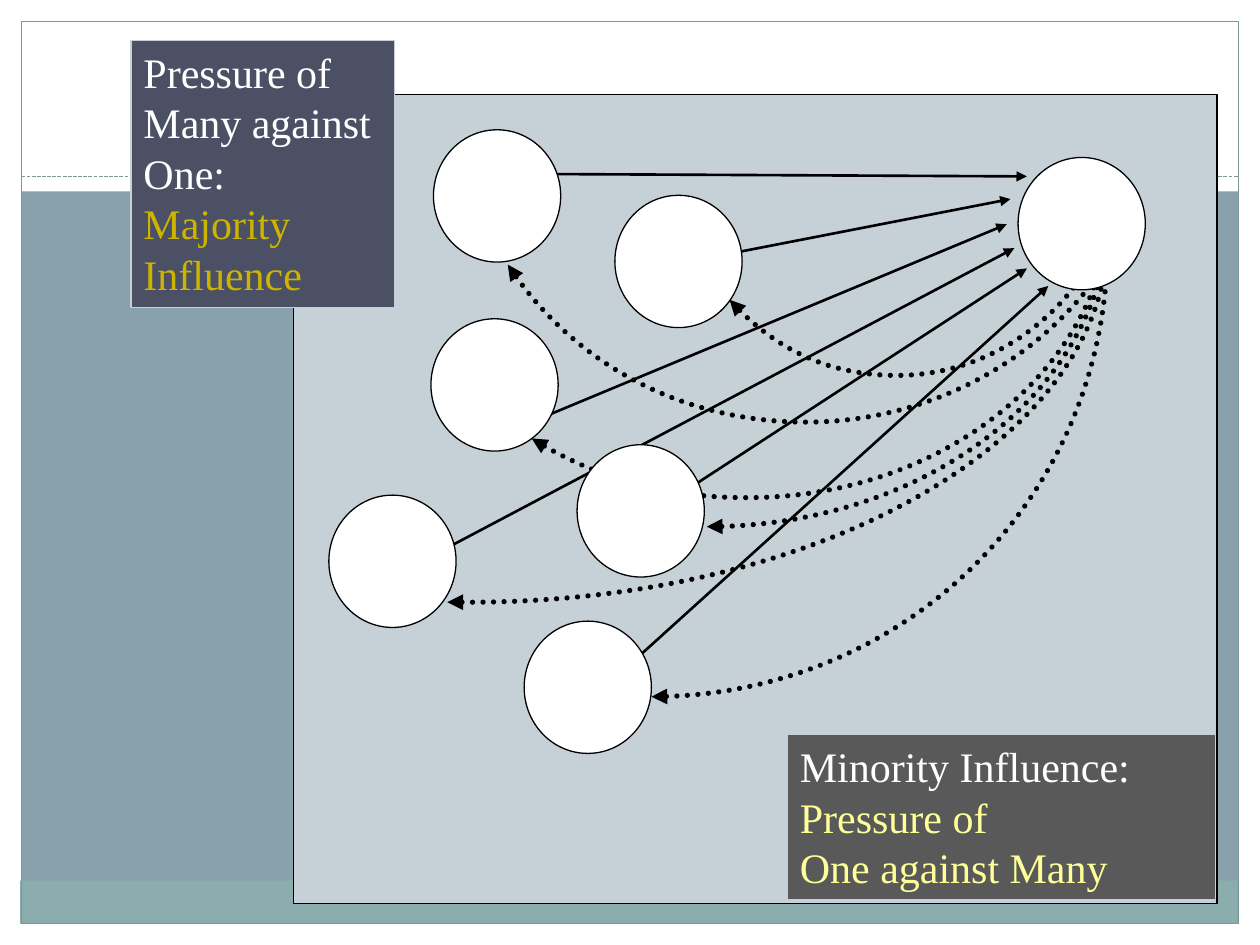
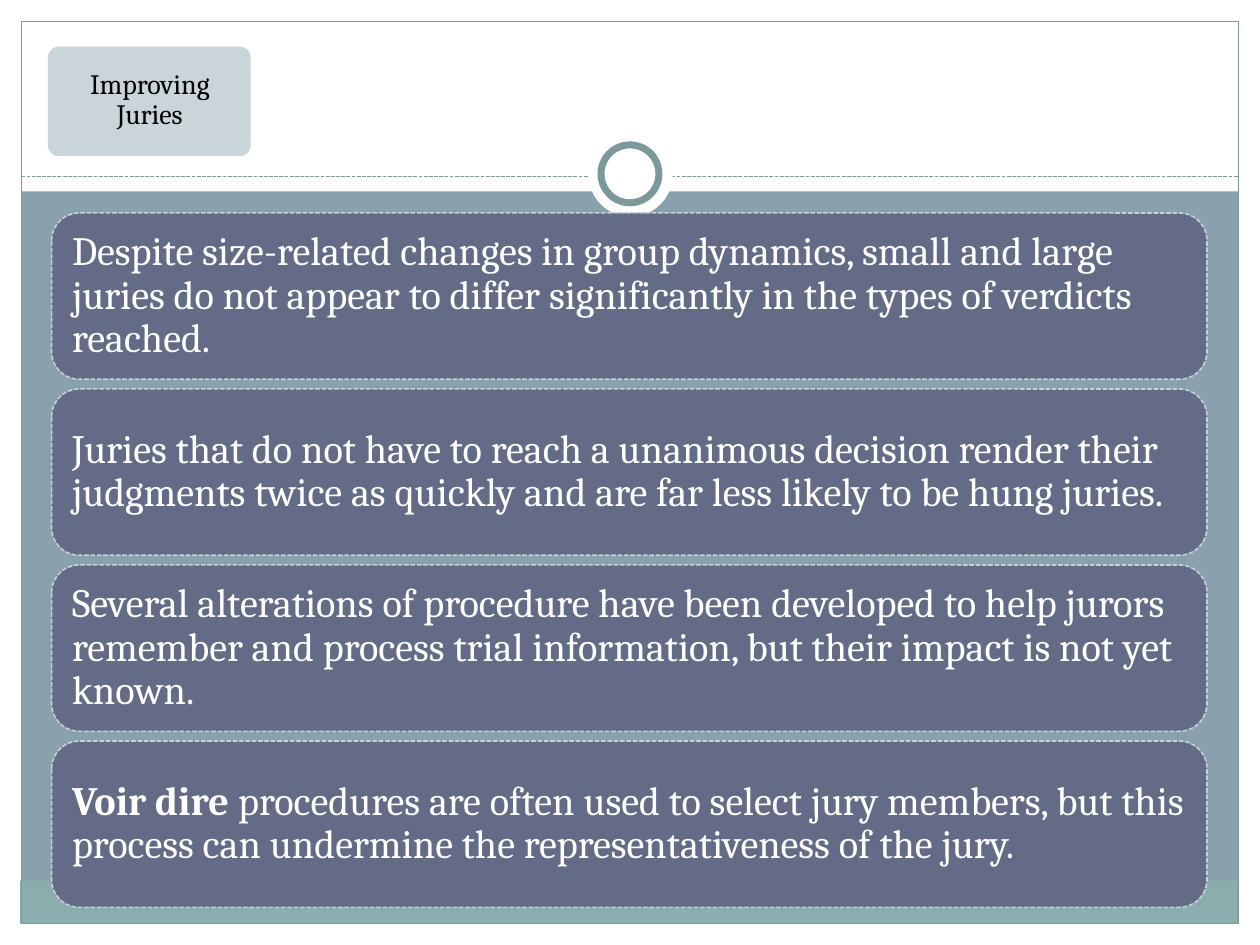
from lxml import etree
from pptx import Presentation
from pptx.dml.color import RGBColor
from pptx.enum.dml import MSO_LINE
from pptx.enum.shapes import MSO_CONNECTOR, MSO_SHAPE
from pptx.enum.text import MSO_ANCHOR, PP_ALIGN
from pptx.oxml.ns import qn
from pptx.util import Inches, Pt

RECT, ROUND, OVAL = MSO_SHAPE.RECTANGLE, MSO_SHAPE.ROUNDED_RECTANGLE, MSO_SHAPE.OVAL
DOTS, DASHES = MSO_LINE.ROUND_DOT, MSO_LINE.SQUARE_DOT
TOP, MIDDLE = MSO_ANCHOR.TOP, MSO_ANCHOR.MIDDLE
LEFT, CENTER = PP_ALIGN.LEFT, PP_ALIGN.CENTER
STRAIGHT = MSO_CONNECTOR.STRAIGHT
TITLE_ONLY, BLANK = 5, 6
COLS, ROWS = 100, 75
BREAK = "\n"

COLORS = {
    "back": "88A1AD", "white": "FFFFFF", "black": "000000", "base": "8CADAE",
    "frame": "7C999A", "pale": "C5D1D7", "card": "646B86", "navy": "4B5064",
    "gray": "595959", "gold": "CCB400", "yellow": "FFFF99",
}
LABEL = {"name": "Times New Roman", "size": Pt(24)}
CARD = {"name": "Cambria", "size": Pt(23)}
HEADING = {"name": "Cambria", "size": Pt(16)}

BANDS = [(0, 73.3, 100, 1.7), (0, 0, 100, 15.2), (0, 0, 1.7, 75), (98.3, 0, 1.7, 75)]
PERSON_SIZE = (10.1, 10.5)
PEOPLE = [(34.4, 10.3), (41.6, 49.3), (80.8, 12.5), (34.2, 25.3),
          (48.8, 15.5), (45.8, 35.3), (26.1, 39.3)]
MAJORITY_ARROWS = [
    ((40.9, 13.8), (81.5, 14)), ((42.9, 33.2), (79.9, 17.8)),
    ((51.1, 41.1), (81.5, 21.3)), ((58.6, 20), (80.2, 15.8)),
    ((34.5, 44), (80.5, 19.7)), ((50.8, 52), (83.2, 22.7)),
]
MINORITY_CURVES = [
    [(40.3, 21), (45.4, 28.8), (54.4, 33.5), (64, 33.5),
     (72.8, 33.5), (81.2, 29.5), (86.5, 22.7)],
    [(57.9, 23.8), (61.4, 27.7), (66.1, 29.8), (71.2, 29.8),
     (79.9, 29.8), (87.5, 23.2), (89.1, 14.1)],
    [(42.2, 34.8), (47.1, 37.9), (53.1, 39.5), (59.3, 39.5),
     (75.3, 39.5), (88.2, 28.7), (88.2, 15.5)],
    [(51.7, 55.3), (71.7, 55.3), (87.9, 39.2), (87.9, 19.3)],
    [(56.1, 41.8), (73.7, 41.8), (88.1, 30.4), (88.1, 16.3)],
    [(35.5, 47.8), (36.1, 47.8), (36.6, 47.8), (37.2, 47.8),
     (65.2, 47.8), (87.9, 34.8), (87.9, 18.8)],
]
JURY_POINTS = [
    [("Despite size-related changes in group dynamics, small and large juries do not "
      "appear to differ significantly in the types of verdicts reached.", {})],
    [("Juries that do not have to reach a unanimous decision render their judgments "
      "twice as quickly and are far less likely to be hung juries.", {})],
    [("Several alterations of procedure have been developed to help jurors remember "
      "and process trial information, but their impact is not yet known.", {})],
    [("Voir dire ", {"bold": True}),
     ("procedures are often used to select jury members, but this process can "
      "undermine the representativeness of the jury.", {})],
]


def rgb(name):
    return RGBColor.from_string(COLORS[name])


class Deck:
    def __init__(self):
        self.prs = Presentation()
        self.prs.slide_width, self.prs.slide_height = Inches(10), Inches(7.5)
        fill = self.prs.slide_master.background.fill
        fill.solid()
        fill.fore_color.rgb = rgb("back")

    def x(self, cols):
        return int(self.prs.slide_width * cols / COLS)

    def y(self, rows):
        return int(self.prs.slide_height * rows / ROWS)

    def point(self, at):
        return self.x(at[0]), self.y(at[1])

    def box(self, at):
        return self.point(at[:2]) + self.point(at[2:])

    def new_slide(self, layout):
        self.s = self.prs.slides.add_slide(self.prs.slide_layouts[layout])
        for band in BANDS:
            self.shape(RECT, band, "white")
        self.shape(RECT, (1.6, 69.9, 96.6, 3.4), "base")
        self.shape(RECT, (1.7, 1.7, 96.6, 71.6), None, "frame")
        self.line((1.7, 14), (98.3, 14), "frame", 0.75, DASHES)

    def stroke(self, sp, color, width, dash=None, arrow=None):
        sp.line.color.rgb = rgb(color)
        sp.line.width = Pt(width)
        if dash:
            sp.line.dash_style = dash
        if arrow:
            ln = sp._element.spPr.find(qn("a:ln"))
            etree.SubElement(ln, qn(f"a:{arrow}End"), type="triangle")

    def shape(self, kind, at, fill, line=None, width=0.75, dash=None, alpha=None):
        sp = self.s.shapes.add_shape(kind, *self.box(at))
        sp.shadow.inherit = False
        if fill:
            sp.fill.solid()
            sp.fill.fore_color.rgb = rgb(fill)
        else:
            sp.fill.background()
        if alpha:
            color = sp._element.spPr.find(qn("a:solidFill"))[0]
            etree.SubElement(color, qn("a:alpha"), val=str(alpha * 1000))
        if line:
            self.stroke(sp, line, width, dash)
        else:
            sp.line.fill.background()
        return sp

    def line(self, start, end, color, width, dash=None, arrow=None):
        sp = self.s.shapes.add_connector(STRAIGHT, *self.point(start), *self.point(end))
        etree.SubElement(sp._element.spPr, qn("a:effectLst"))
        self.stroke(sp, color, width, dash, arrow)

    def curve(self, points, color, width):
        start, *rest = [self.point(at) for at in points]
        builder = self.s.shapes.build_freeform(*start)
        builder.add_line_segments(rest, close=False)
        sp = builder.convert_to_shape()
        sp.shadow.inherit = False
        sp.fill.background()
        segments = sp._element.xpath(".//a:lnTo")
        outline = segments[0].getparent()
        for i in range(0, len(segments), 3):
            bezier = etree.SubElement(outline, qn("a:cubicBezTo"))
            for segment in segments[i:i + 3]:
                bezier.append(segment[0])
                outline.remove(segment)
        self.stroke(sp, color, width, DOTS, "head")
        sp._element.spPr.find(qn("a:ln")).set("cap", "rnd")

    def text(self, sp, paragraphs, style, color="white", anchor=TOP,
             align=LEFT, spacing=1.0, margins=(0.1, 0.05)):
        tf = sp.text_frame
        side, edge = map(Inches, margins)
        frame = {"word_wrap": True, "vertical_anchor": anchor, "margin_left": side,
                 "margin_right": side, "margin_top": edge, "margin_bottom": edge}
        for key, value in frame.items():
            setattr(tf, key, value)
        for i, runs in enumerate(paragraphs):
            p = tf.add_paragraph() if i else tf.paragraphs[0]
            p.alignment, p.line_spacing = align, spacing
            for words, extra in runs:
                if words == BREAK:
                    p.add_line_break()
                    continue
                r = p.add_run()
                r.text = words
                look = {**style, "color": color, **extra}
                r.font.color.rgb = rgb(look.pop("color"))
                for key, value in look.items():
                    setattr(r.font, key, value)

    def title(self, at, words):
        sp = self.s.shapes.title
        sp.left, sp.top, sp.width, sp.height = self.box(at)
        self.s.shapes._spTree.append(sp._element)
        self.text(sp, [[(words, {})]], HEADING, "black", MIDDLE, CENTER, 0.9, (0.03, 0.02))


def influence_slide(deck):
    deck.new_slide(BLANK)
    deck.shape(RECT, (23.3, 7.5, 73.3, 64.2), "pale", "black")
    for start, end in MAJORITY_ARROWS:
        deck.line(start, end, "black", 1.5, arrow="tail")
    for points in MINORITY_CURVES:
        deck.curve(points, "black", 3)
    for person in PEOPLE:
        deck.shape(OVAL, person + PERSON_SIZE, "white", "black")
    sp = deck.shape(RECT, (10.4, 3.2, 20.9, 21.2), "navy", "pale")
    deck.text(sp, [[("Pressure of Many against", {})],
                   [("One:", {}), (BREAK, {}),
                    ("Majority Influence", {"color": "gold"})]], LABEL)
    sp = deck.shape(RECT, (62.5, 58.3, 34, 13.1), "gray", "pale")
    deck.text(sp, [[("Minority Influence:", {"color": "white"}), (BREAK, {}),
                    ("Pressure of", {})],
                   [("One against Many", {})]], LABEL, "yellow")


def juries_slide(deck):
    deck.new_slide(TITLE_ONLY)
    deck.shape(OVAL, (46.7, 10.5, 6.7, 6.7), "white")
    deck.shape(OVAL, (47.7, 11.5, 4.6, 4.6), "white", "frame", 4)
    sp = deck.shape(ROUND, (3.8, 3.7, 16.1, 8.7), "pale", alpha=90)
    sp.adjustments[0] = 0.1
    deck.title((4.1, 3.9, 15.6, 8.2), "Improving Juries")
    for i, runs in enumerate(JURY_POINTS):
        sp = deck.shape(ROUND, (4.1, 16.9 + 13.97 * i, 91.7, 13.2),
                        "card", "pale", 0.9, DASHES)
        deck.text(sp, [runs], CARD, anchor=MIDDLE, spacing=0.9, margins=(0.1, 0.1))


def main():
    deck = Deck()
    influence_slide(deck)
    juries_slide(deck)
    deck.prs.save("out.pptx")


if __name__ == "__main__":
    main()
